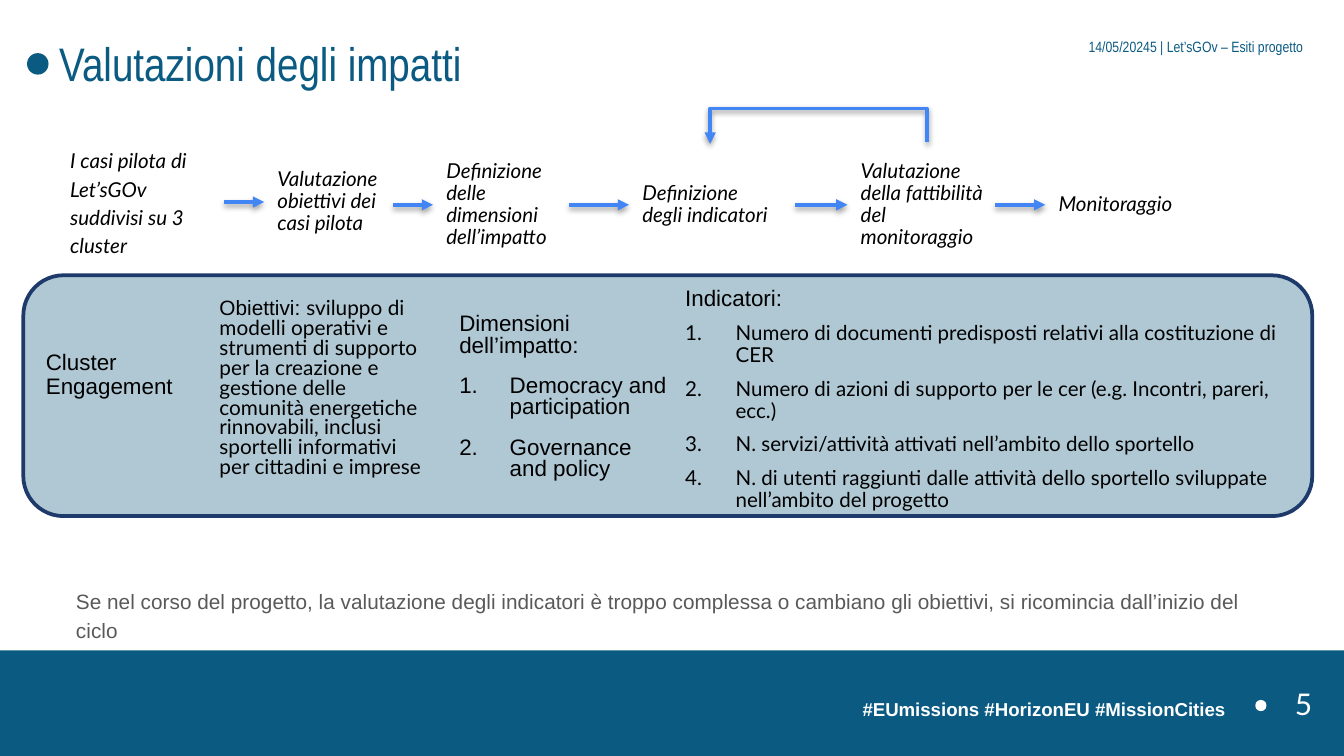
from lxml import etree
from pptx import Presentation
from pptx.dml.color import RGBColor
from pptx.enum import shapes, text
from pptx.oxml import ns
from pptx.util import Pt

COLORS = {
    "teal": "0A5A82", "white": "FFFFFF", "black": "000000", "gray": "595959",
    "arrow": "4285F4", "panel": "156082", "border": "1D3A6B",
}
INSET = 7.2
LIST_INDENT = 27


def add_element(parent, tag, **attributes):
    return etree.SubElement(parent, ns.qn(tag), attributes)


def fill_frame(shape, paragraphs, inset=None, anchor=text.MSO_ANCHOR.TOP):
    """Each paragraph is a dict with its runs (text, size, font) and format."""
    frame = shape.text_frame
    frame.word_wrap = True
    frame.auto_size = text.MSO_AUTO_SIZE.NONE
    frame.vertical_anchor = anchor
    if inset is not None:
        frame.margin_left = frame.margin_right = Pt(inset)
        frame.margin_top = frame.margin_bottom = Pt(inset)
    for index, item in enumerate(paragraphs):
        paragraph = frame.paragraphs[0] if index == 0 else frame.add_paragraph()
        if item.get("numbered"):
            properties = paragraph._p.get_or_add_pPr()
            properties.set("marL", str(Pt(LIST_INDENT)))
            properties.set("indent", str(-Pt(LIST_INDENT)))
            color = add_element(properties, "a:buClr")
            add_element(color, "a:srgbClr", val=COLORS["black"])
            add_element(properties, "a:buFont", typeface="Arial")
            add_element(properties, "a:buAutoNum", type="arabicPeriod")
        paragraph.alignment = item.get("align", text.PP_ALIGN.LEFT)
        paragraph.line_spacing = item.get("spacing", 1.0)
        if index:
            paragraph.space_before = Pt(item.get("before", 0))
        for words, size, font in item["runs"]:
            run = paragraph.add_run()
            run.text = words
            run.font.size = Pt(size)
            run.font.name = font
            run.font.bold = item.get("bold", False)
            run.font.italic = item.get("italic", False)
            run.font.color.rgb = RGBColor.from_string(COLORS[item.get("color", "black")])


def add_text(slide, box, paragraphs, **options):
    shape = slide.shapes.add_textbox(*map(Pt, box))
    fill_frame(shape, paragraphs, **options)
    return shape


def add_block(slide, kind, box, color):
    shape = slide.shapes.add_shape(kind, *map(Pt, box))
    shape.shadow.inherit = False
    shape.fill.solid()
    shape.fill.fore_color.rgb = RGBColor.from_string(COLORS[color])
    shape.line.fill.background()
    return shape


def add_arrow(slide, kind, start, end):
    arrow = slide.shapes.add_connector(kind, *map(Pt, start + end))
    arrow.line.width = Pt(2)
    arrow.line.color.rgb = RGBColor.from_string(COLORS["arrow"])
    properties = arrow._element.spPr
    add_element(properties.find(ns.qn("a:ln")), "a:tailEnd", type="triangle")
    effects = add_element(properties, "a:effectLst")
    shadow = add_element(effects, "a:outerShdw", blurRad=str(Pt(3.1)), dist=str(Pt(1.6)),
                         dir="5400000", rotWithShape="0")
    color = add_element(shadow, "a:srgbClr", val=COLORS["black"])
    add_element(color, "a:alpha", val="38000")
    return arrow


def add_header(slide, box):
    left, top, width, height = box
    add_block(slide, shapes.MSO_SHAPE.OVAL, (left - 10, top + 17, 11.5, 11.5), "teal")
    title = slide.shapes.title
    title.left, title.top, title.width, title.height = map(Pt, box)
    fill_frame(title, [{"runs": [("Valutazioni degli impatti", 25.2, "Arial Narrow")],
                        "color": "teal"}], inset=INSET)
    add_text(slide, (left + width - 189.5, top, 199.5, 26),
             [{"runs": [("14/05/20245 | Let’sGOv – Esiti progetto", 8, "Arial Narrow")],
               "color": "teal", "align": text.PP_ALIGN.RIGHT, "spacing": 1.15}], inset=INSET)


def add_process(slide, box):
    left, top, _, height = box
    # Step: words, left, top and width in the row, start of the arrow leading to it
    steps = [
        ("I casi pilota di Let’sGOv suddivisi su 3 cluster", 0, 0, 91.5, None),
        ("Valutazione obiettivi dei casi pilota", 111, 0.5, 76.5, 89.5),
        ("Definizione delle dimensioni dell’impatto", 201.5, 2, 79, 180),
        ("Definizione degli indicatori", 306.5, 2, 88, 274.5),
        ("Valutazione della fattibilità del monitoraggio", 423.5, 2, 88, 395.5),
        ("Monitoraggio", 529.5, 2, 88, 502.5),
    ]
    for index, (words, x, y, width, arrow_start) in enumerate(steps):
        step = add_text(slide, (left + x, top + y, width, height),
                        [{"runs": [(words, 11, "Lato")], "italic": True,
                          "spacing": 0.9 if index else 1.15}],
                        inset=None if index else INSET, anchor=text.MSO_ANCHOR.MIDDLE)
        if arrow_start is not None:
            middle = top + y + height / 2
            arrow = add_arrow(slide, shapes.MSO_CONNECTOR.STRAIGHT,
                              (left + arrow_start, middle), (left + x, middle))
            arrow.end_connect(step, 1)

    # Loop from feasibility back to the indicators: an elbow turned a quarter
    span, depth, rise = 116, 1, 18
    center_x, center_y = left + 408, top + 21
    loop = add_arrow(slide, shapes.MSO_CONNECTOR.ELBOW,
                     (center_x + depth / 2, center_y + span / 2),
                     (center_x - depth / 2, center_y - span / 2))
    loop._element.spPr.find(ns.qn("a:xfrm")).set("rot", "16200000")
    guides = loop._element.spPr.find(ns.qn("a:prstGeom")).get_or_add_avLst()
    add_element(guides, "a:gd", name="adj1", fmla=f"val {-rise * 100000 // depth}")


def add_cluster_panel(slide, box):
    left, top, _, _ = box
    panel = add_block(slide, shapes.MSO_SHAPE.ROUNDED_RECTANGLE, box, "panel")
    fill_color = panel._element.spPr.find(ns.qn("a:solidFill"))[0]
    add_element(fill_color, "a:alpha", val="34000")
    panel.line.width = Pt(2)
    panel.line.color.rgb = RGBColor.from_string(COLORS["border"])

    goal = ("sviluppo di modelli operativi e strumenti di supporto per la creazione e gestione "
            "delle comunità energetiche rinnovabili, inclusi sportelli informativi per cittadini "
            "e imprese")
    dimensions = ["Democracy and participation", "Governance and policy"]
    indicators = [
        "Numero di documenti predisposti relativi alla costituzione di CER",
        "Numero di azioni di supporto per le cer (e.g. Incontri, pareri, ecc.)",
        "N. servizi/attività attivati nell’ambito dello sportello",
        "N. di utenti raggiunti dalle attività dello sportello sviluppate nell’ambito del progetto",
    ]

    def numbered(items, size, font, spacing, before):
        return [{"runs": [(item, size, font)], "numbered": True, "spacing": spacing,
                 "before": before} for item in items]

    columns = [
        ((5, 37, 84, 58), [{"runs": [("Cluster Engagement", 12, "Arial")], "spacing": 0.9}]),
        ((98, 9.5, 128, 103), [{"runs": [("Obiettivi: ", 11.1, "Arial"), (goal, 11.1, "Lato")],
                                "spacing": 0.8}]),
        ((226.5, 17.5, 128, 101.5),
         [{"runs": [("Dimensioni dell’impatto:", 12, "Arial")], "spacing": 0.8}]
         + numbered(dimensions, 12, "Arial", 0.8, 10)),
        ((347.5, 3, 340.5, 124),
         [{"runs": [("Indicatori:", 12, "Arial")], "spacing": 0.9}]
         + numbered(indicators, 11, "Lato", 0.9, 6)),
    ]
    for (x, y, width, height), paragraphs in columns:
        add_text(slide, (left + x, top + y, width, height), paragraphs)


def add_note(slide, box):
    left, top, width, height = box
    words = ("Se nel corso del progetto, la valutazione degli indicatori è troppo complessa o "
             "cambiano gli obiettivi, si ricomincia dall’inizio del ciclo")
    note = add_text(slide, box, [{"runs": [(words, 11.1, "Arial")], "color": "gray",
                                  "spacing": 1.15}], inset=INSET)
    note.text_frame.margin_left = Pt(INSET + 9)


def add_footer(slide, box):
    _, top, _, _ = box
    add_block(slide, shapes.MSO_SHAPE.RECTANGLE, box, "teal")
    add_text(slide, (667, top + 13, 43, 31),
             [{"runs": [("5", 16, "Lato")], "color": "white", "align": text.PP_ALIGN.RIGHT}],
             inset=INSET, anchor=text.MSO_ANCHOR.MIDDLE)
    add_text(slide, (455, top + 16.5, 212, 23),
             [{"runs": [("#EUmissions #HorizonEU #MissionCities", 10, "Arial")],
               "color": "white", "bold": True, "spacing": 1.13}], inset=INSET)
    add_block(slide, shapes.MSO_SHAPE.OVAL, (672.5, top + 26.5, 6, 6), "white")


def main():
    presentation = Presentation()
    presentation.slide_width, presentation.slide_height = Pt(720), Pt(405)
    slide = presentation.slides.add_slide(presentation.slide_layouts[5])
    add_footer(slide, (0, 348.5, 720, 56.5))
    add_header(slide, (24.5, 11.5, 671, 45.5))
    add_process(slide, (30.5, 55.5, 617.5, 104.5))
    add_cluster_panel(slide, (12.5, 147.5, 690.5, 129))
    add_note(slide, (24.5, 306.5, 671, 35.5))
    presentation.save("out.pptx")


if __name__ == "__main__":
    main()
